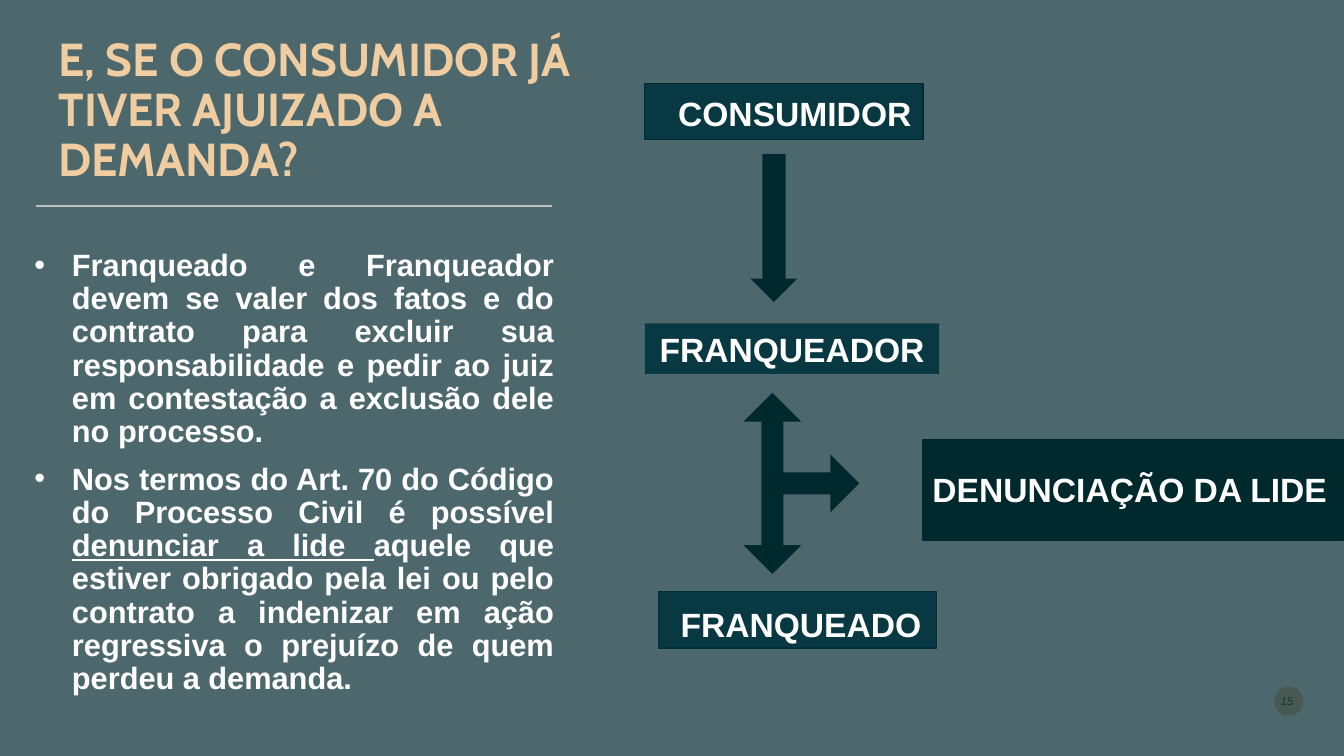
import dataclasses

import pptx
import pptx.dml.color
import pptx.enum.shapes
import pptx.enum.text
import pptx.oxml
import pptx.oxml.ns
import pptx.util

Cm, Pt = pptx.util.Cm, pptx.util.Pt
RGB = pptx.dml.color.RGBColor.from_string
Shape = pptx.enum.shapes.MSO_SHAPE
Align, Anchor = pptx.enum.text.PP_ALIGN, pptx.enum.text.MSO_ANCHOR
qn = pptx.oxml.ns.qn

WIDTH, HEIGHT = 33.87, 19.05


@dataclasses.dataclass(frozen=True)
class Theme:
    dark: str = "00292E"
    panel: str = "083841"
    panel_edge: str = "003038"
    sand: str = "F0CDA1"
    light: str = "FFFFFF"
    rule: str = "BFBFBF"
    heading_font: str = "Cabin"
    text_font: str = "Arial"
    title_size: int = 33
    label_size: int = 24
    body_size: int = 22
    number_size: int = 8
    opacity: int = 70


def apply(target, values):
    for attribute, value in values.items():
        setattr(target, attribute, value)


def drawing_element(markup):
    """Make an element from a tag name and its attributes."""
    return pptx.oxml.parse_xml(
        f'<a:{markup} xmlns:a="http://schemas.openxmlformats.org/drawingml/2006/main"/>')


def set_opacity(fill_owner, percent):
    """Add an alpha value to the first solid colour under an XML element."""
    colour = next(fill_owner.iter(qn("a:srgbClr")))
    alpha = drawing_element("alpha")
    alpha.set("val", str(percent * 1000))
    colour.append(alpha)


class SlideBuilder:
    def __init__(self, slide, theme):
        self.slide, self.theme = slide, theme

    def place(self, element, box):
        names = ("left", "top", "width", "height")
        apply(element, dict(zip(names, map(Cm, box))))

    def add_words(self, paragraph, wording, size, color, font=None, **format_values):
        run = paragraph.add_run()
        run.text = wording
        apply(run.font, {"name": font or self.theme.text_font,
                         "size": Pt(size), **format_values})
        run.font.color.rgb = RGB(color)
        return run

    def title(self, wording, box):
        heading = self.slide.shapes.title
        self.place(heading, box)
        frame = heading.text_frame
        apply(frame, {"vertical_anchor": Anchor.BOTTOM, "word_wrap": True,
                      "auto_size": pptx.enum.text.MSO_AUTO_SIZE.NONE})
        apply(frame.paragraphs[0], {"alignment": Align.LEFT, "line_spacing": 0.9})
        self.add_words(frame.paragraphs[0], wording, self.theme.title_size,
                       self.theme.sand, self.theme.heading_font, bold=True)

    def bullets(self, items, box, indent):
        """Each item is a list of (wording, underlined) pairs."""
        body = self.slide.placeholders[1]
        self.place(body, box)
        frame = body.text_frame
        apply(frame, {"vertical_anchor": Anchor.TOP, "word_wrap": True,
                      "auto_size": pptx.enum.text.MSO_AUTO_SIZE.NONE})
        for index, item in enumerate(items):
            paragraph = frame.add_paragraph() if index else frame.paragraphs[0]
            apply(paragraph, {"alignment": Align.JUSTIFY, "line_spacing": 0.9,
                              "space_before": Pt(10)})
            properties = paragraph._p.get_or_add_pPr()
            properties.set("marL", str(Cm(indent)))
            properties.set("indent", str(-Cm(indent)))
            for wording, underlined in item:
                self.add_words(paragraph, wording, self.theme.body_size,
                               self.theme.light, bold=True, underline=underlined)

    def shape(self, kind, box, fill, edge=None, opacity=None):
        figure = self.slide.shapes.add_shape(kind, *map(Cm, box))
        figure.shadow.inherit = False
        figure.fill.solid()
        figure.fill.fore_color.rgb = RGB(fill)
        if opacity:
            set_opacity(figure._element.spPr, opacity)
        if edge:
            figure.line.color.rgb = RGB(edge)
            figure.line.width = Pt(1)
        else:
            figure.line.fill.background()
        return figure

    def party(self, wording, box, fill, edge, alignment, left, top):
        """A box of the diagram, its label offset by left and top."""
        frame = self.shape(Shape.RECTANGLE, box, fill, edge).text_frame
        apply(frame, {"word_wrap": True, "vertical_anchor": Anchor.TOP,
                      "margin_left": Cm(left), "margin_top": Cm(top),
                      "margin_right": 0, "margin_bottom": 0})
        frame.paragraphs[0].alignment = alignment
        self.add_words(frame.paragraphs[0], wording, self.theme.label_size,
                       self.theme.light, bold=True)

    def rule(self, left, top, length):
        line = self.slide.shapes.add_connector(
            pptx.enum.shapes.MSO_CONNECTOR.STRAIGHT,
            Cm(left), Cm(top), Cm(left + length), Cm(top))
        line.line.color.rgb = RGB(self.theme.rule)
        line.line.width = Pt(2)
        line._element.spPr.append(drawing_element("effectLst"))

    def page_number(self, number, box):
        frame = self.slide.shapes.add_textbox(*map(Cm, box)).text_frame
        apply(frame, {"word_wrap": True, "vertical_anchor": Anchor.MIDDLE})
        frame.paragraphs[0].alignment = Align.RIGHT
        run = self.add_words(frame.paragraphs[0], number, self.theme.number_size,
                             self.theme.dark, italic=True)
        set_opacity(run._r, self.theme.opacity)


def main():
    deck = pptx.Presentation()
    apply(deck, {"slide_width": Cm(WIDTH), "slide_height": Cm(HEIGHT)})
    theme = Theme()
    builder = SlideBuilder(deck.slides.add_slide(deck.slide_layouts[1]), theme)

    builder.shape(Shape.OVAL, (32.11, 17.3, 0.74, 0.74), theme.sand)
    veil = builder.shape(Shape.RECTANGLE, (0, 0, WIDTH, HEIGHT), theme.dark,
                         opacity=theme.opacity)
    tree = veil._element.getparent()
    for placeholder in list(builder.slide.placeholders):
        tree.append(placeholder._element)

    builder.title("E, SE O CONSUMIDOR JÁ TIVER AJUIZADO A DEMANDA?",
                  (1.22, 0.38, 13.94, 4.45))
    builder.rule(0.91, 5.19, 13)
    builder.bullets([
        [("Franqueado e Franqueador devem se valer dos fatos e do contrato para "
          "excluir sua responsabilidade e pedir ao juiz em contestação a exclusão "
          "dele no processo.", False)],
        [("Nos termos do Art. 70 do Código do Processo Civil é possível ", False),
         ("denunciar a lide ", True),
         ("aquele que estiver obrigado pela lei ou pelo contrato a indenizar em "
          "ação regressiva o prejuízo de quem perdeu a demanda.", False)],
    ], (0.61, 6.17, 13.61, 12.5), 0.95)

    parties = [
        ("CONSUMIDOR", (16.25, 2.11, 7.01, 1.41), theme.panel, theme.dark,
         Align.LEFT, 0.84, 0.23),
        ("FRANQUEADOR", (16.25, 8.15, 7.42, 1.27), theme.panel, None,
         Align.CENTER, 0, 0.13),
        ("FRANQUEADO", (16.59, 14.91, 7.01, 1.42), theme.panel, theme.panel_edge,
         Align.CENTER, 0.18, 0.3),
        ("DENUNCIAÇÃO DA LIDE", (23.25, 11.07, 10.6, 2.54), theme.dark, theme.dark,
         Align.LEFT, 0.25, 0.74),
    ]
    for party in parties:
        builder.party(*party)

    builder.shape(Shape.DOWN_ARROW, (18.92, 3.88, 1.17, 3.73), theme.dark)
    branching = builder.shape(Shape.LEFT_RIGHT_UP_ARROW, (17.91, 10.72, 4.57, 2.92),
                              theme.dark)
    branching.rotation = 90
    for index, ratio in enumerate((0.19, 0.25, 0.25)):
        branching.adjustments[index] = ratio

    builder.page_number("15", (31.85, 17.15, 0.99, 1.02))
    deck.save("out.pptx")


if __name__ == "__main__":
    main()
